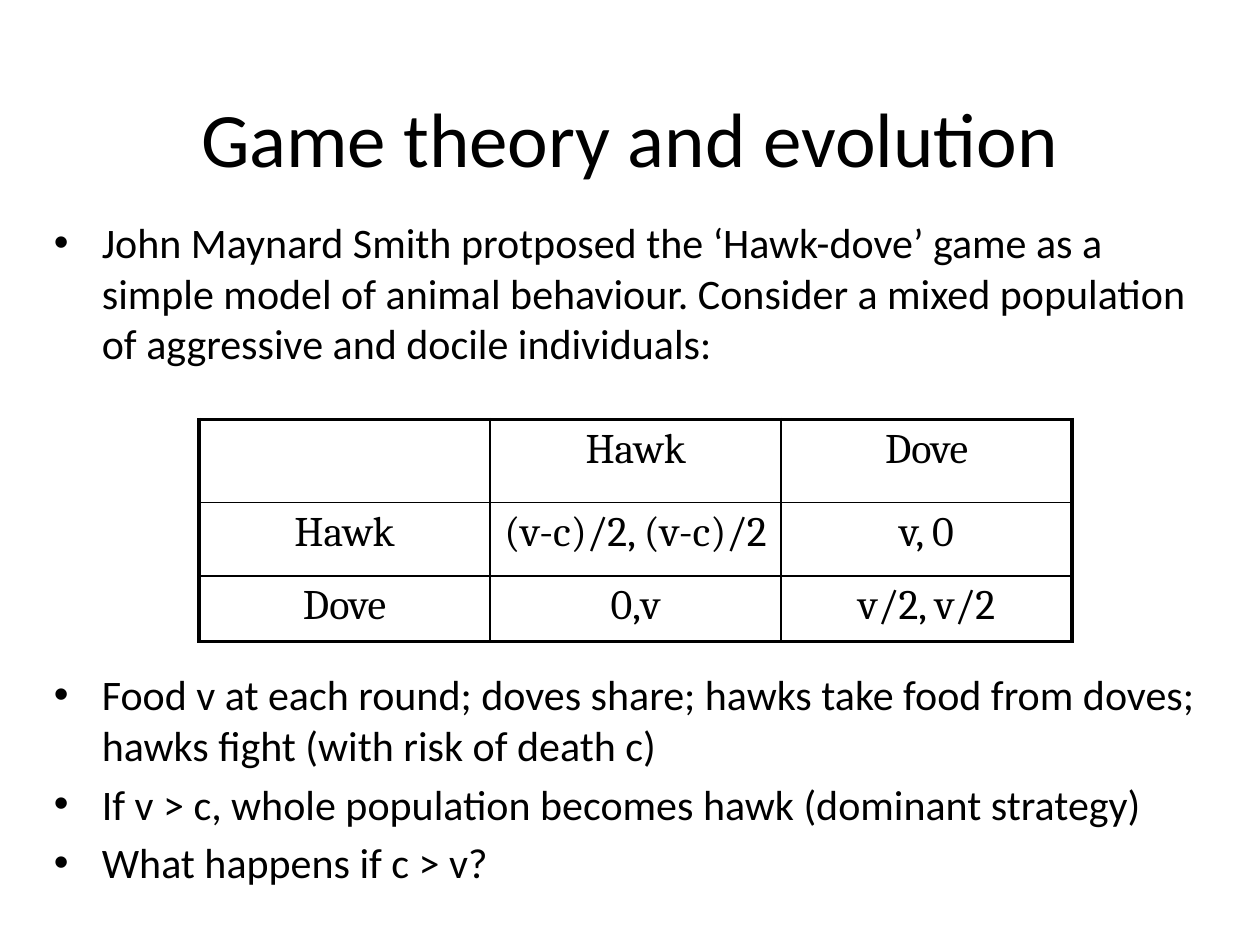
"""Build the hawk-dove game slide with its payoff table."""
from lxml import etree
from pptx import Presentation
from pptx.dml.color import RGBColor
from pptx.enum.text import MSO_ANCHOR, PP_ALIGN
from pptx.oxml.ns import qn
from pptx.util import Inches, Pt

CENTER = PP_ALIGN.CENTER
MIDDLE = MSO_ANCHOR.MIDDLE
COLORS = {"ink": "000000"}


def add_run(paragraph, text, size, font):
    run = paragraph.add_run()
    run.text = text
    run.font.size = Pt(size)
    run.font.name = font
    run.font.color.rgb = RGBColor.from_string(COLORS["ink"])


def add_border(cell, side, width):
    line = etree.SubElement(cell._tc.get_or_add_tcPr(), qn(f"a:ln{side}"), w=str(Pt(width)))
    fill = etree.SubElement(line, qn("a:solidFill"))
    etree.SubElement(fill, qn("a:srgbClr"), val=COLORS["ink"])


prs = Presentation()
prs.slide_width, prs.slide_height = Inches(10), Inches(7.5)
slide = prs.slides.add_slide(prs.slide_layouts[5])

title = slide.shapes.title
title.left, title.top = Inches(0.75), Inches(0.67)
title.width, title.height = Inches(8.5), Inches(0.83)
title.text_frame.vertical_anchor = MIDDLE
heading = title.text_frame.paragraphs[0]
heading.alignment = CENTER
add_run(heading, "Game theory and evolution", 44, "Calibri")

points = [
    ("John Maynard Smith protposed the ‘Hawk-dove’ game as a simple model of animal "
     "behaviour. Consider a mixed population of aggressive and docile individuals:", 4.8),
    ("Food v at each round; doves share; hawks take food from doves; "
     "hawks fight (with risk of death c)", 172),
    ("If v > c, whole population becomes hawk (dominant strategy)", 4.8),
    ("What happens if c > v?", 4.8),
]
body = slide.shapes.add_textbox(Inches(0.33), Inches(1.67), Inches(9.25), Inches(5.58))
body.text_frame.word_wrap = True
for index, (point, gap) in enumerate(points):
    paragraph = body.text_frame.add_paragraph() if index else body.text_frame.paragraphs[0]
    paragraph.space_before = Pt(gap)
    properties = paragraph._p.get_or_add_pPr()
    properties.set("marL", str(Inches(0.38)))
    properties.set("indent", str(Inches(-0.38)))
    etree.SubElement(properties, qn("a:buFont"), typeface="Arial")
    etree.SubElement(properties, qn("a:buChar"), char="•")
    add_run(paragraph, point, 24, "Calibri")

payoffs = [
    ["", "Hawk", "Dove"],
    ["Hawk", "(v-c)/2, (v-c)/2", "v, 0"],
    ["Dove", "0,v", "v/2, v/2"],
]
row_heights = [0.66, 0.58, 0.52]
matrix = slide.shapes.add_table(
    3, 3, Inches(1.58), Inches(3.33), Inches(6.92), Inches(1.75)).table
matrix.first_row = matrix.horz_banding = False
for column in matrix.columns:
    column.width = Inches(2.31)
for r, (labels, height) in enumerate(zip(payoffs, row_heights)):
    matrix.rows[r].height = Inches(height)
    for c, label in enumerate(labels):
        cell = matrix.cell(r, c)
        outer_sides = {"L": c == 0, "R": c == 2, "T": r == 0, "B": r == 2}
        for side, is_outer in outer_sides.items():
            add_border(cell, side, 2.25 if is_outer else 1)
        cell.fill.background()
        if label:
            paragraph = cell.text_frame.paragraphs[0]
            paragraph.alignment = CENTER
            paragraph.space_before = Pt(4.8)
            add_run(paragraph, label, 24, "Cambria")

prs.save("out.pptx")
